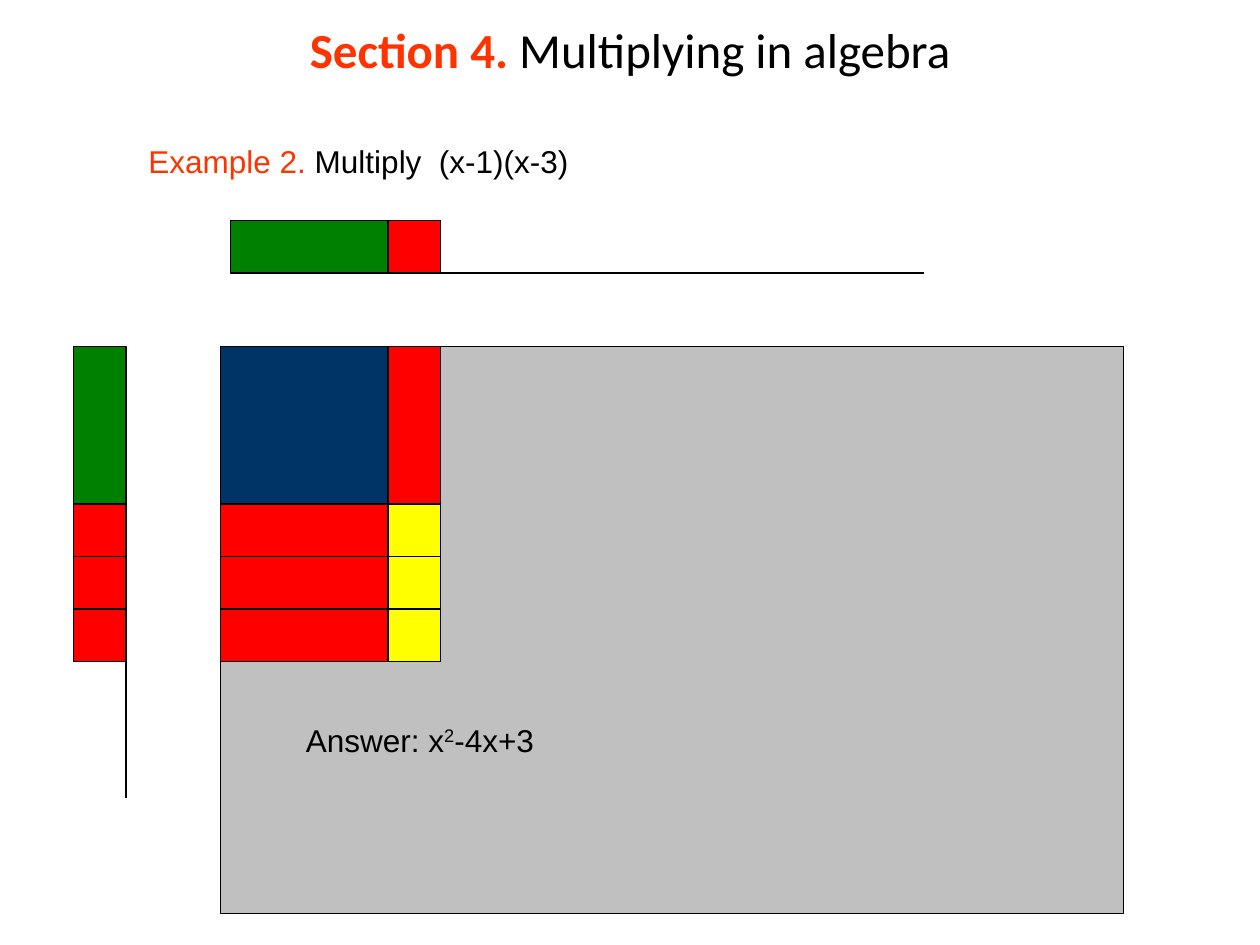
from lxml import etree
from pptx import Presentation
from pptx.dml.color import RGBColor
from pptx.enum.shapes import MSO_CONNECTOR, MSO_SHAPE
from pptx.enum.text import MSO_ANCHOR, PP_ALIGN
from pptx.oxml.ns import qn
from pptx.util import Inches, Pt

RECT = MSO_SHAPE.RECTANGLE
STRAIGHT = MSO_CONNECTOR.STRAIGHT
TITLE_ONLY = 5

ORANGE = RGBColor(0xFF, 0x33, 0x00)
BLACK = RGBColor(0x00, 0x00, 0x00)
GREY = RGBColor(0xC0, 0xC0, 0xC0)
GREEN = RGBColor(0x00, 0x80, 0x00)
RED = RGBColor(0xFF, 0x00, 0x00)
NAVY = RGBColor(0x00, 0x33, 0x66)
YELLOW = RGBColor(0xFF, 0xFF, 0x00)

# Runs: text, colour, bold, baseline shift in percent
TITLE = [("Section 4.", ORANGE, True, 0), (" Multiplying in algebra", BLACK, False, 0)]
EXAMPLE = [("Example 2.", ORANGE, False, 0), (" Multiply  (x-1)(x-3)", BLACK, False, 0)]
ANSWER = [("Answer: x", BLACK, False, 0), ("2", BLACK, False, 30), ("-4x+3", BLACK, False, 0)]

# Algebra tiles in inches: a unit tile is one U, an x tile is three
U = 5 / 12
X = 3 * U
MAT_LEFT, MAT_TOP = 1.75, 2.75
MAT_WIDTH, MAT_HEIGHT = 7.17, 4.5
UNIT_LEFT = MAT_LEFT + 1.33             # left edge of the unit column
TOP_LEFT, TOP_ROW = UNIT_LEFT - X, 1.75
SIDE_COLUMN = 1 - U
ROW_HEIGHTS = [X, U, U, U]              # the factor x-3
ROW_COLOURS = [(GREEN, NAVY, RED)] + [(RED, RED, YELLOW)] * 3  # side, x column, unit column


def add_runs(p, runs, font, size):
    for text, colour, bold, baseline in runs:
        r = p.add_run()
        r.text = text
        r.font.name, r.font.size = font, Pt(size)
        r.font.bold = bold
        r.font.color.rgb = colour
        if baseline:
            r.font._element.set("baseline", str(baseline * 1000))


def add_label(s, runs, left, top, width):
    box = s.shapes.add_textbox(Inches(left), Inches(top), Inches(width), Inches(0.4))
    box.text_frame.word_wrap = True
    add_runs(box.text_frame.paragraphs[0], runs, "Arial", 18)


def add_tile(s, left, top, width, height, colour):
    sp = s.shapes.add_shape(RECT, Inches(left), Inches(top), Inches(width), Inches(height))
    sp.shadow.inherit = False
    sp.fill.solid()
    sp.fill.fore_color.rgb = colour
    sp.line.color.rgb = BLACK
    sp.line.width = Pt(0.75)


def add_line(s, x1, y1, x2, y2):
    line = s.shapes.add_connector(STRAIGHT, Inches(x1), Inches(y1), Inches(x2), Inches(y2))
    line.line.color.rgb = BLACK
    line.line.width = Pt(0.75)
    etree.SubElement(line._element.spPr, qn("a:effectLst"))


def main():
    prs = Presentation()
    prs.slide_width, prs.slide_height = Inches(10), Inches(7.5)
    s = prs.slides.add_slide(prs.slide_layouts[TITLE_ONLY])

    title = s.shapes.title
    title.left, title.top = Inches(0.5), Inches(0.08)
    title.width, title.height = Inches(9), Inches(0.62)
    tf = title.text_frame
    tf.vertical_anchor = MSO_ANCHOR.MIDDLE
    p = tf.paragraphs[0]
    p.alignment = PP_ALIGN.CENTER
    add_runs(p, TITLE, "Calibri", 28)

    add_line(s, TOP_LEFT, TOP_ROW + U, TOP_LEFT + 5.5, TOP_ROW + U)
    add_line(s, SIDE_COLUMN + U, MAT_TOP, SIDE_COLUMN + U, MAT_TOP + 3.58)
    add_tile(s, MAT_LEFT, MAT_TOP, MAT_WIDTH, MAT_HEIGHT, GREY)
    add_label(s, EXAMPLE, 1.08, 1.08, 7.17)

    add_tile(s, TOP_LEFT, TOP_ROW, X, U, GREEN)
    add_tile(s, UNIT_LEFT, TOP_ROW, U, U, RED)

    columns = [(SIDE_COLUMN, U), (MAT_LEFT, UNIT_LEFT - MAT_LEFT), (UNIT_LEFT, U)]
    top = MAT_TOP
    for height, colours in zip(ROW_HEIGHTS, ROW_COLOURS):
        for (left, width), colour in zip(columns, colours):
            add_tile(s, left, top, width, height, colour)
        top += height

    add_label(s, ANSWER, 2.33, 5.67, 2.67)
    prs.save("out.pptx")


if __name__ == "__main__":
    main()
